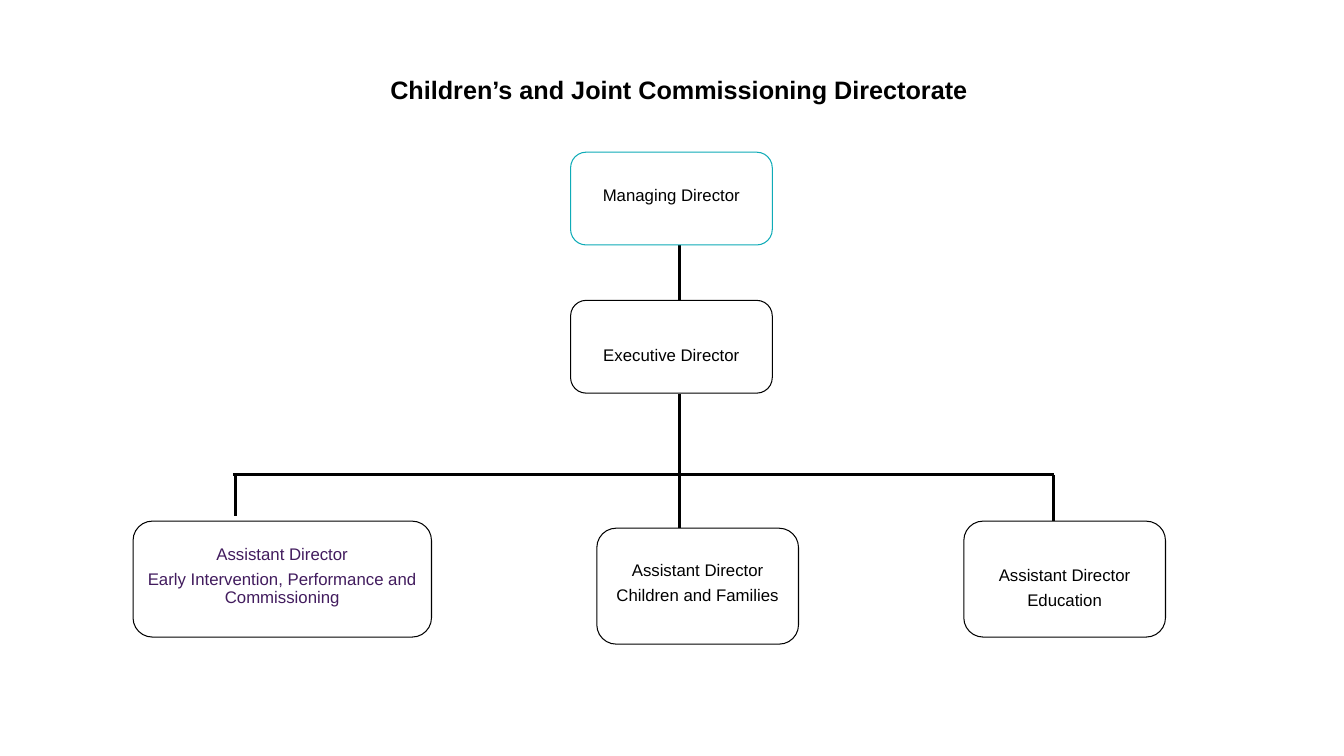
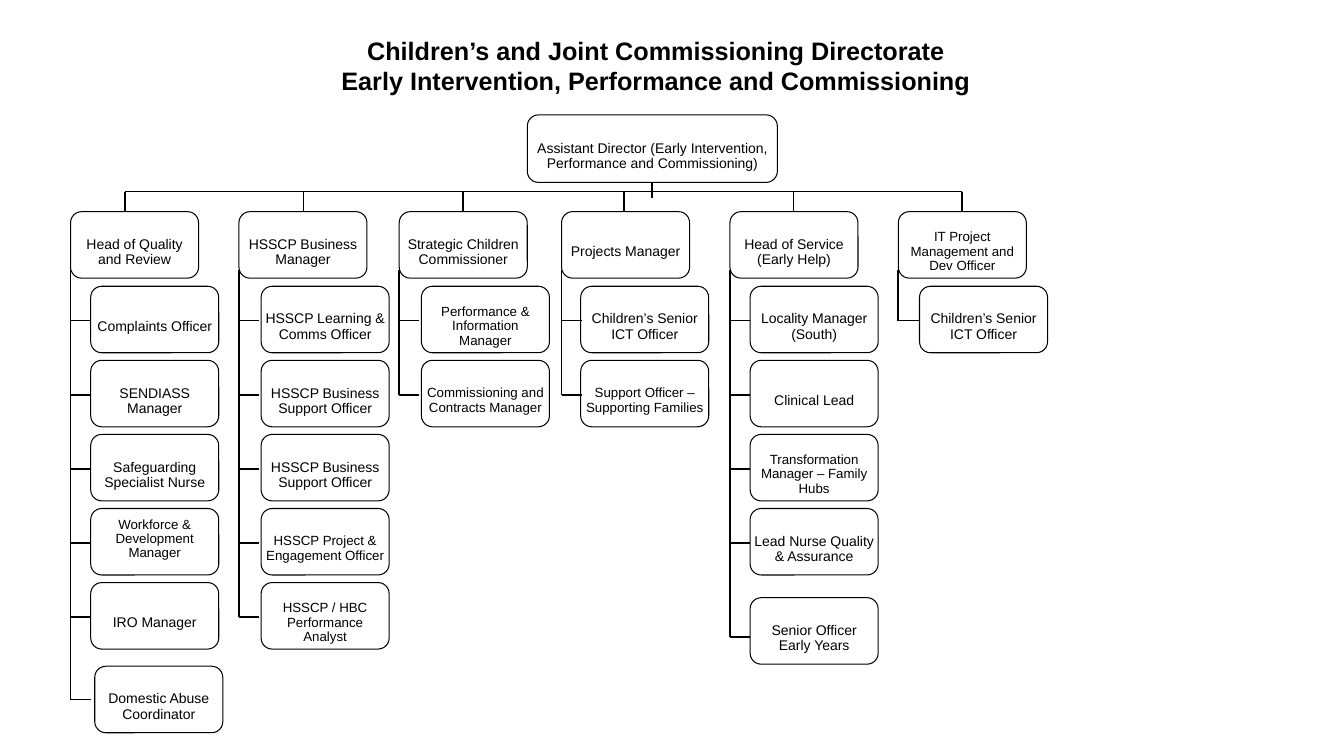
from lxml import etree
from pptx import Presentation
from pptx.dml.color import RGBColor
from pptx.enum.shapes import MSO_CONNECTOR, MSO_SHAPE
from pptx.enum.text import MSO_ANCHOR, MSO_AUTO_SIZE, PP_ALIGN
from pptx.oxml.ns import qn
from pptx.util import Inches, Pt

STRAIGHT = MSO_CONNECTOR.STRAIGHT
ROUNDED = MSO_SHAPE.ROUNDED_RECTANGLE
MIDDLE = MSO_ANCHOR.MIDDLE
CENTER = PP_ALIGN.CENTER
GROW = MSO_AUTO_SIZE.SHAPE_TO_FIT_TEXT

COLORS = {"black": "000000", "teal": "0EABB7", "purple": "421C5E"}
FONT = "Arial"
DIRECTORATE = "Children’s and Joint Commissioning Directorate"
BRANCH = "Early Intervention, Performance and Commissioning"


def rgb(name):
    return RGBColor.from_string(COLORS[name])


class OrgChart:
    """Style of the charts, and the slide being drawn."""

    def __init__(self, prs):
        self.prs = prs
        self.slide = None
        self.line_width = 1

    def new_slide(self, line_width):
        self.slide = self.prs.slides.add_slide(self.prs.slide_layouts[6])
        self.line_width = line_width

    def add_text(self, tf, lines, size, color="black", bold=False, after=0):
        tf.word_wrap = True
        for i, text in enumerate(lines):
            p = tf.paragraphs[0] if i == 0 else tf.add_paragraph()
            p.alignment = CENTER
            if after:
                p.line_spacing = 0.9
                p.space_after = Pt(after)
            r = p.add_run()
            r.text = text
            r.font.name = FONT
            r.font.size = Pt(size)
            r.font.bold = bold
            r.font.color.rgb = rgb(color)

    def title(self, x, y, w, h, lines):
        sp = self.slide.shapes.add_textbox(Inches(x), Inches(y), Inches(w), Inches(h))
        self.add_text(sp.text_frame, lines, 18, bold=True)
        sp.text_frame.auto_size = GROW

    def box(self, x, y, w, h, lines, size, low=True, outline="black", color="black"):
        """Draw a role; low sets its text about half a line below the middle."""
        sp = self.slide.shapes.add_shape(ROUNDED, Inches(x), Inches(y), Inches(w), Inches(h))
        sp.shadow.inherit = False
        sp.fill.background()
        sp.line.color.rgb = rgb(outline)
        sp.line.width = Pt(0.75)
        tf = sp.text_frame
        tf.vertical_anchor = MIDDLE
        tf.margin_left = tf.margin_right = Inches(0.01)
        tf.margin_top = Inches(0.01 + (0.02 * size if low else 0))
        tf.margin_bottom = Inches(0.06)
        self.add_text(tf, lines, size, color, after=0.4 * size)

    def line(self, x1, y1, x2, y2):
        cx = self.slide.shapes.add_connector(
            STRAIGHT, Inches(x1), Inches(y1), Inches(x2), Inches(y2))
        cx.line.color.rgb = rgb("black")
        cx.line.width = Pt(self.line_width)
        etree.SubElement(cx._element.spPr, qn("a:effectLst"))


def directorate_slide(chart):
    chart.new_slide(line_width=2.25)
    trunk, bus = 6.74, 4.71
    chart.line(trunk, 2.43, trunk, 2.98)
    chart.line(trunk, 3.91, trunk, bus)
    chart.line(2.31, bus, 10.45, bus)
    for x, bottom in ((2.34, 5.12), (trunk, 5.24), (10.45, 5.17)):
        chart.line(x, bus, x, bottom)
    chart.box(5.66, 1.51, 2, 0.92, ["Managing Director"], 12, low=False, outline="teal")
    chart.box(5.66, 2.98, 2, 0.92, ["Executive Director"], 12)
    assistants = [
        (1.32, 5.17, 2.96, BRANCH, False, "purple"),
        (5.92, 5.24, 2, "Children and Families", False, "black"),
        (9.56, 5.17, 2, "Education", True, "black"),
    ]
    for x, y, w, area, low, color in assistants:
        chart.box(x, y, w, 1.15, ["Assistant Director", area], 12, low, color=color)
    chart.title(3.62, 0.69, 6.23, 0.4, [DIRECTORATE])


BOX_W, BOX_H = 1.27, 0.66
HEAD_Y, BUS_Y, STEM_Y = 2.1, 1.9, 2.68
ROW_Y, ROW_STEP = 2.84, 0.735
ARM, ARM_DROP = 0.2, 0.34
SMALL = {
    "IT Project Management and Dev Officer", "Workforce & Development Manager",
    "HSSCP Project & Engagement Officer", "HSSCP / HBC Performance Analyst",
    "Performance & Information Manager", "Commissioning and Contracts Manager",
    "Support Officer – Supporting Families", "Transformation Manager – Family Hubs",
}
RAISED = {"Workforce & Development Manager"}
# Places off the grid: indent, top, height of the arm
OFF_GRID = {
    "Domestic Abuse Coordinator": (0.24, 6.61, 6.94),
    "Senior Officer Early Years": (0.2, 5.93, 6.32),
}
# Left, indent of the team, x of the drop, head, team
TEAMS = [
    (0.7, 0.2, 1.24, "Head of Quality and Review",
     ["Complaints Officer", "SENDIASS Manager", "Safeguarding Specialist Nurse",
      "Workforce & Development Manager", "IRO Manager", "Domestic Abuse Coordinator"]),
    (2.37, 0.22, 3.01, "HSSCP Business Manager",
     ["HSSCP Learning & Comms Officer", "HSSCP Business Support Officer",
      "HSSCP Business Support Officer", "HSSCP Project & Engagement Officer",
      "HSSCP / HBC Performance Analyst"]),
    (3.96, 0.22, 4.59, "Strategic Children Commissioner",
     ["Performance & Information Manager", "Commissioning and Contracts Manager"]),
    (5.57, 0.19, 6.19, "Projects Manager",
     ["Children’s Senior ICT Officer", "Support Officer – Supporting Families"]),
    (7.24, 0.2, 7.87, "Head of Service (Early Help)",
     ["Locality Manager (South)", "Clinical Lead", "Transformation Manager – Family Hubs",
      "Lead Nurse Quality & Assurance", "Senior Officer Early Years"]),
    (8.91, 0.21, 9.54, "IT Project Management and Dev Officer",
     ["Children’s Senior ICT Officer"]),
]


def branch_slide(chart):
    chart.new_slide(line_width=1.25)

    def role(x, y, text):
        size = 9.5 if text in SMALL else 10
        chart.box(x, y, BOX_W, BOX_H, [text], size, low=text not in RAISED)

    chart.title(3.26, 0.3, 6.49, 0.71, [DIRECTORATE, BRANCH])
    chart.box(5.23, 1.14, 2.48, 0.67, [f"Assistant Director ({BRANCH})"], 10)
    chart.line(6.47, 1.81, 6.47, 1.96)
    chart.line(TEAMS[0][2], BUS_Y, TEAMS[-1][2], BUS_Y)
    for x, indent, drop_x, head, team in TEAMS:
        chart.line(drop_x, BUS_Y, drop_x, HEAD_Y)
        role(x, HEAD_Y, head)
        for i, text in enumerate(team):
            top = ROW_Y + i * ROW_STEP
            dx, top, arm_y = OFF_GRID.get(text, (indent, top, top + ARM_DROP))
            role(x + dx, top, text)
            chart.line(x, arm_y, x + ARM, arm_y)
        chart.line(x, STEM_Y, x, arm_y)


def main():
    prs = Presentation()
    prs.slide_width, prs.slide_height = Inches(13.33), Inches(7.5)
    chart = OrgChart(prs)
    directorate_slide(chart)
    branch_slide(chart)
    prs.save("out.pptx")


if __name__ == "__main__":
    main()
